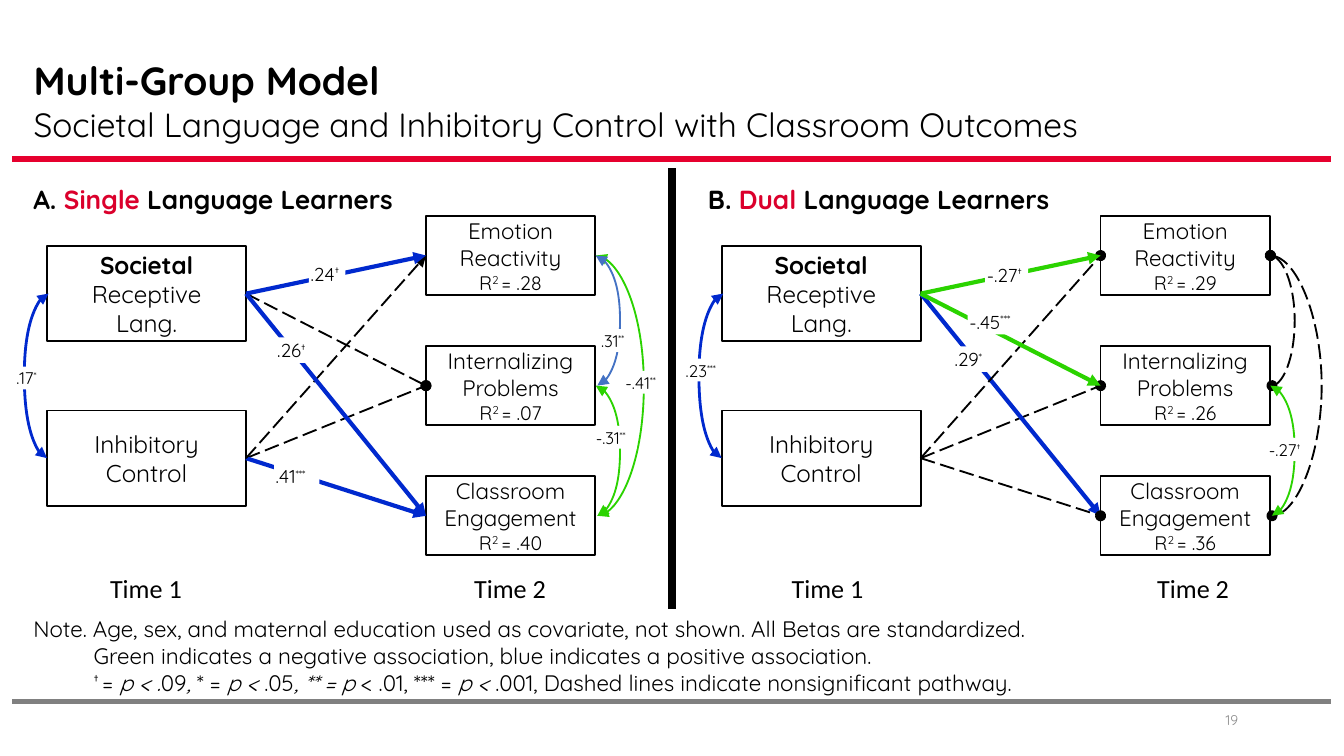
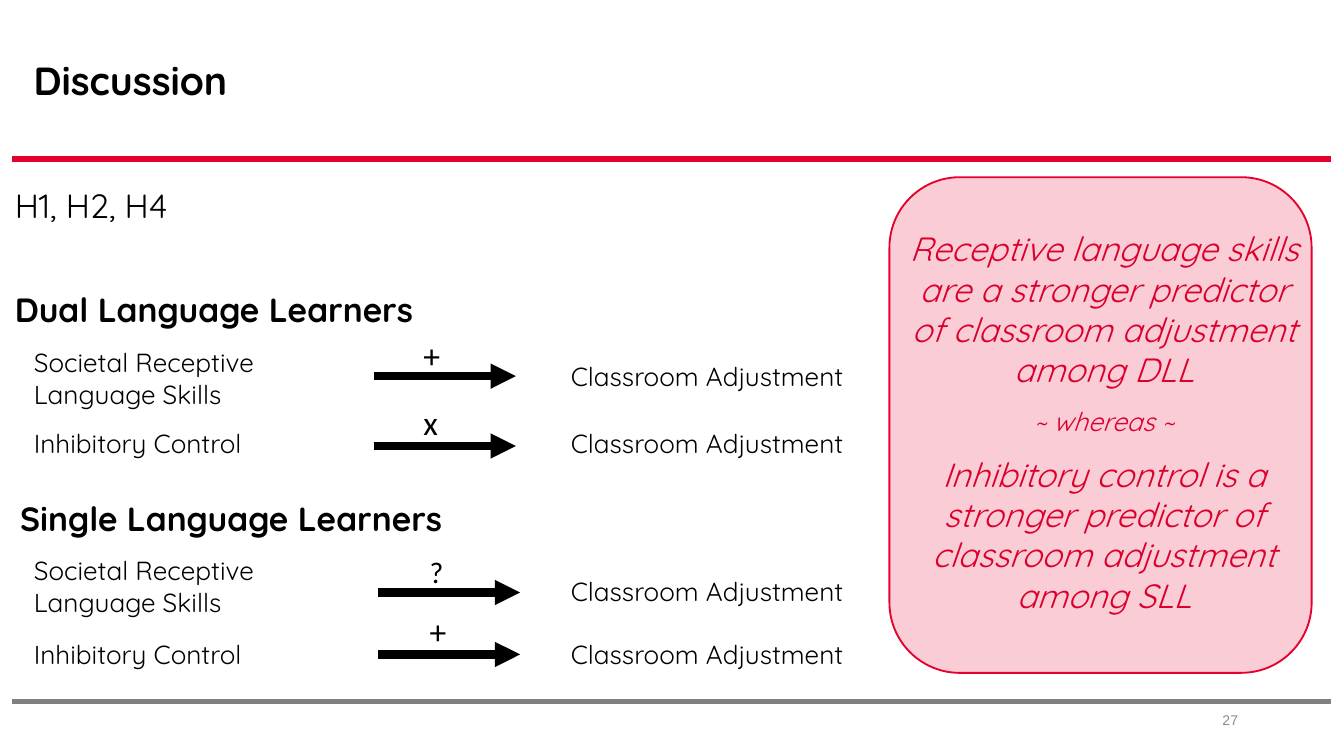
import lxml.etree
import pptx
import pptx.util
from pptx.dml.color import RGBColor
from pptx.enum.dml import MSO_LINE
from pptx.enum.shapes import MSO_CONNECTOR, MSO_SHAPE
from pptx.enum.text import MSO_ANCHOR, MSO_AUTO_SIZE, PP_ALIGN
from pptx.oxml.ns import qn

Cm, Pt = pptx.util.Cm, pptx.util.Pt


class Theme:
    font, plain_font, number_font = "Quicksand", "Calibri", "Arial"
    black, white, grey, pale = "000000", "FFFFFF", "808080", "8C8C8C"
    red, text_red, card_red = "E6002E", "DB002C", "E6002D"
    blue, green, soft_blue = "0029CE", "2BD300", "4472C4"
    title, subtitle, heading, predictor, outcome = 21, 18, 14, 13, 12
    r_squared, path_label, arc_label, number = 10.5, 10, 9, 7.5


# Content: each run is plain text or (text, format)
BOLD, ITALIC, RAISED = {"bold": True}, {"italic": True}, {"raised": True}

PREDICTORS = [[("Societal", BOLD), " Receptive Lang."], ["Inhibitory Control"]]
OUTCOMES = ["Emotion Reactivity", "Internalizing Problems", "Classroom Engagement"]
NOTE = [
    ["Note. Age, sex, and maternal education used as covariate, not shown. "
     "All Betas are standardized."],
    ["Green indicates a negative association, blue indicates a positive association."],
    [("† ", RAISED), "= ", ("p < .", ITALIC), "09", (", ", ITALIC), "* = ",
     ("p < ", ITALIC), ".05", (", ** = p", ITALIC), " < .01, *** = ",
     ("p <", ITALIC), " .001, Dashed lines indicate nonsignificant pathway."],
]

# paths: predictor, outcome, colour (None = nonsignificant), arrowhead
# arcs: outcome, outcome, colour, bulge; labels: value, mark, left, top, width, size
SINGLE = {
    "letter": "A. ", "group": "Single", "left": 0, "times": (1.83, 8.71),
    "r_squared": (".28", ".07", ".40"),
    "paths": [(1, 1, None, "oval"), (1, 2, Theme.blue, "triangle"),
              (1, 0, None, "triangle"), (0, 1, None, "oval"),
              (0, 0, Theme.blue, "triangle"), (0, 2, Theme.blue, "triangle")],
    "arcs": [(0, 2, Theme.green, 0.91), (0, 1, Theme.soft_blue, 0.46),
             (1, 2, Theme.green, 0.46)],
    "labels": [("-.41", "**", 11.79, 7.01, 0.81, Theme.arc_label),
               (".31", "**", 11.33, 6.22, 0.71, Theme.arc_label),
               (".17", "*", 0.28, 6.93, 0.61, Theme.arc_label),
               (".41", "***", 5.18, 8.76, 0.86, Theme.path_label),
               ("-.31", "**", 11.23, 8.05, 0.81, Theme.arc_label),
               (".24", "†", 5.84, 4.93, 0.69, Theme.path_label),
               (".26", "†", 5.21, 6.38, 0.69, Theme.path_label)],
}
DUAL = {
    "letter": "B. ", "group": "Dual", "left": 12.75, "times": (1.96, 8.87),
    "r_squared": (".29", ".26", ".36"),
    "paths": [(1, 1, None, "oval"), (0, 2, Theme.blue, "triangle"),
              (1, 2, None, "oval"), (1, 0, None, "oval"),
              (0, 0, Theme.green, "triangle"), (0, 1, Theme.green, "triangle")],
    "arcs": [(0, 2, None, 0.97), (0, 1, None, 0.46), (1, 2, Theme.green, 0.46)],
    "labels": [("-.27", "†", 5.87, 4.95, 0.81, Theme.path_label),
               ("-.27", "†", 11.2, 8.28, 0.74, Theme.arc_label),
               (".23", "***", 0.18, 6.78, 0.79, Theme.arc_label),
               ("-.45", "***", 5.54, 5.84, 0.99, Theme.path_label),
               (".29", "*", 5.26, 6.55, 0.66, Theme.path_label)],
}

SKILLS = [["Societal Receptive"], ["Language Skills"]]
CONTROL = [["Inhibitory Control"]]
EFFECT = "Classroom Adjustment"
# rows: cause, its middle, sign, its top, its size, arrow height, effect middle
FINDINGS = [
    {"heading": "Dual Language Learners", "left": 0.03, "middle": 5.84,
     "arrow_left": 7.06, "sign_left": 7.75,
     "rows": [(SKILLS, 7.15, "+", 6.2, 18, 7.11, 7.11),
              (CONTROL, 8.38, "x", 7.47, 18, 8.43, 8.38)]},
    {"heading": "Single Language Learners", "left": 0.13, "middle": 9.8,
     "arrow_left": 7.14, "sign_left": 7.87,
     "rows": [(SKILLS, 11.08, "?", 10.34, 16, 11.2, 11.18),
              (CONTROL, 12.36, "+", 11.43, 18, 12.37, 12.36)]},
]
CONCLUSION = [
    ["Receptive language skills are a stronger predictor of classroom "
     "adjustment among DLL"],
    [("~ whereas ~", {"size": 14})],
    ["Inhibitory control is a stronger predictor of classroom adjustment among SLL"],
]


# Text helpers
def colour(code):
    return RGBColor.from_string(code)


def write(frame, lines, align=PP_ALIGN.LEFT, before=0, indents=(), **base):
    """Fill a frame; before is the gap above every paragraph but the first."""
    frame.word_wrap = True
    for number, runs in enumerate(lines):
        para = frame.add_paragraph() if number else frame.paragraphs[0]
        para.alignment = align
        para.space_before = Pt(before if number else 0)
        if number < len(indents) and indents[number]:
            para._p.get_or_add_pPr().set("marL", str(Cm(indents[number])))
        for run in runs:
            words, extra = (run, {}) if isinstance(run, str) else run
            look = {"name": Theme.font, "color": Theme.black, "bold": False,
                    **base, **extra}
            span = para.add_run()
            span.text = words
            span.font.color.rgb = colour(look.pop("color"))
            if look.pop("raised", False):
                span._r.get_or_add_rPr().set("baseline", "30000")
            look["size"] = Pt(look["size"])
            for name, value in look.items():
                setattr(span.font, name, value)


def add_text(page, left, top, width, height, lines,
             anchor=MSO_ANCHOR.TOP, wrap=True, **formats):
    box = page.shapes.add_textbox(Cm(left), Cm(top), Cm(width), Cm(height))
    box.text_frame.vertical_anchor = anchor
    write(box.text_frame, lines, **formats)
    box.text_frame.word_wrap = wrap
    return box


def add_centred_text(page, left, middle, width, height, lines, **formats):
    return add_text(page, left, middle - height / 2, width, height, lines,
                    anchor=MSO_ANCHOR.MIDDLE, **formats)


# Shape helpers
def add_box(page, left, top, width, height, fill, line=None, kind=MSO_SHAPE.RECTANGLE):
    box = page.shapes.add_shape(kind, Cm(left), Cm(top), Cm(width), Cm(height))
    box.shadow.inherit = False
    box.fill.solid()
    box.fill.fore_color.rgb = colour(fill)
    if line:
        box.line.color.rgb = colour(line)
        box.line.width = Pt(1)
    else:
        box.line.fill.background()
    return box


def add_line(page, start, end, code, weight, head=None, tail=None,
             dashed=False, kind=MSO_CONNECTOR.STRAIGHT):
    line = page.shapes.add_connector(kind, *[Cm(value) for value in start + end])
    line.line.color.rgb = colour(code)
    line.line.width = Pt(weight)
    if dashed:
        line.line.dash_style = MSO_LINE.LONG_DASH
    properties = line._element.spPr
    outline = properties.find(qn("a:ln"))
    for tag, mark in (("a:headEnd", head), ("a:tailEnd", tail)):
        if mark:
            lxml.etree.SubElement(outline, qn(tag), type=mark)
    lxml.etree.SubElement(properties, qn("a:effectLst"))
    return line


def add_arc(page, x, top, bottom, bulge, code, weight, mark, dashed=False):
    """Curve between two heights; a negative bulge bends to the left."""
    run = 0.03
    end = x + run if bulge > 0 else x - run
    arc = add_line(page, (x, top), (end, bottom), code, weight, mark, mark,
                   dashed, MSO_CONNECTOR.CURVE)
    guides = arc._element.spPr.find(qn("a:prstGeom")).get_or_add_avLst()
    lxml.etree.SubElement(guides, qn("a:gd"), name="adj1",
                          fmla=f"val {round(abs(bulge) / run * 100000)}")


# Shared frame: title, two rules, page number
def add_page(deck, title, number, subtitle=None, number_font=Theme.font):
    page = deck.slides.add_slide(deck.slide_layouts[5])
    holder = page.shapes.title
    place = {"left": 0.38, "top": 0.94, "width": 22.15,
             "height": 2.69 if subtitle else 1.93}
    for name, value in place.items():
        setattr(holder, name, Cm(value))
    holder.text_frame.auto_size = MSO_AUTO_SIZE.NONE
    holder.text_frame.vertical_anchor = MSO_ANCHOR.TOP
    lines = [[(title, BOLD)]]
    if subtitle:
        lines.append([(subtitle, {"size": Theme.subtitle})])
    write(holder.text_frame, lines, size=Theme.title)
    for y, code in ((3, Theme.red), (13.26, Theme.grey)):
        add_line(page, (0.23, y), (25.15, y), code, 3)
    add_text(page, 17.93, 13.23, 5.72, 0.76, [[number]], anchor=MSO_ANCHOR.MIDDLE,
             align=PP_ALIGN.RIGHT, size=Theme.number, color=Theme.pale, name=number_font)
    return page


# One path diagram
def add_panel(page, panel):
    left = panel["left"]
    add_text(page, left + 0.38, 3.35, 10.29, 0.86,
             [[panel["letter"], (panel["group"], {"color": Theme.text_red}),
               " Language Learners"]], size=Theme.heading, bold=True)

    predictors, outcomes = [], []
    for row, runs in enumerate(PREDICTORS):
        box = add_box(page, left + 0.89, 4.65 + row * 3.11, 3.76, 1.8,
                      Theme.white, Theme.black)
        write(box.text_frame, [runs], PP_ALIGN.CENTER, size=Theme.predictor)
        predictors.append(box)
    for row, (name, share) in enumerate(zip(OUTCOMES, panel["r_squared"])):
        box = add_box(page, left + 8.05, 4.08 + row * 2.46, 3.2, 1.5,
                      Theme.white, Theme.black)
        small = {"size": Theme.r_squared}
        write(box.text_frame,
              [[name], [("R", small), ("2 ", {**small, **RAISED}), (f"= {share}", small)]],
              PP_ALIGN.CENTER, size=Theme.outcome)
        outcomes.append(box)

    for source, target, code, mark in panel["paths"]:
        line = add_line(page, (0, 0), (1, 1), code or Theme.black,
                        2.25 if code else 1, tail=mark, dashed=not code)
        line.begin_connect(predictors[source], 3)
        line.end_connect(outcomes[target], 1)

    def middle(box):
        return (box.top + box.height / 2) / Cm(1)

    for upper, lower, code, bulge in panel["arcs"]:
        add_arc(page, left + 11.26, middle(outcomes[upper]), middle(outcomes[lower]),
                bulge, code or Theme.black, 1, "triangle" if code else "oval", not code)
    add_arc(page, left + 0.92, *map(middle, predictors), -0.46, Theme.blue, 1.5, "triangle")

    for value, mark, x, y, width, size in panel["labels"]:
        label = add_box(page, left + x, y, width, 0.048 * size, Theme.white)
        frame = label.text_frame
        for side in ("left", "top", "right", "bottom"):
            setattr(frame, f"margin_{side}", Cm(0.03))
        frame.vertical_anchor = MSO_ANCHOR.TOP
        write(frame, [[value, (mark, RAISED)]], size=size)
        frame.word_wrap = False
    for number, x in enumerate(panel["times"], 1):
        add_text(page, left + x, 10.7, 1.88, 0.86, [[f"Time {number}"]], wrap=False,
                 size=Theme.heading, name=Theme.plain_font)


def build_model(deck):
    page = add_page(deck, "Multi-Group Model", "19",
                    "Societal Language and Inhibitory Control with Classroom Outcomes")
    for panel in (DUAL, SINGLE):
        add_panel(page, panel)
    add_line(page, (12.7, 3.18), (12.7, 11.51), Theme.black, 4.5)
    add_text(page, 0.38, 11.51, 24.16, 1.8, NOTE, indents=(0, 1.14, 1.14),
             size=Theme.outcome)


def build_discussion(deck):
    page = add_page(deck, "Discussion", "27", number_font=Theme.number_font)
    add_centred_text(page, 0.03, 3.87, 12, 1.05, [["H1, H2, H4"]], size=Theme.subtitle)
    for group in FINDINGS:
        add_centred_text(page, group["left"], group["middle"], 12, 1.05,
                         [[group["heading"]]], size=Theme.subtitle, bold=True)
        start = group["arrow_left"]
        for cause, cause_y, sign, sign_top, size, arrow_y, effect_y in group["rows"]:
            add_centred_text(page, 0.39, cause_y, 5.21, 0.25 + 0.6 * len(cause), cause,
                             size=Theme.heading)
            add_text(page, group["sign_left"], sign_top, 0.84, 1.02, [[sign]],
                     wrap=False, size=size, name=Theme.plain_font)
            add_line(page, (start, arrow_y), (start + 2.69, arrow_y), Theme.black, 4.5,
                     tail="triangle")
            add_centred_text(page, 10.54, effect_y, 6, 0.87, [[EFFECT]],
                             size=Theme.heading)

    # Conclusion card
    card = add_box(page, 16.81, 3.35, 7.98, 9.37, Theme.card_red, Theme.card_red,
                   MSO_SHAPE.ROUNDED_RECTANGLE)
    tint = card._element.spPr.find(qn("a:solidFill"))[0]
    lxml.etree.SubElement(tint, qn("a:alpha"), val="20000")
    add_text(page, 16.81, 4.19, 7.98, 7.87, CONCLUSION, align=PP_ALIGN.CENTER,
             before=8.75, indents=(0.13, 0.13, 0.13), size=Theme.subtitle,
             color=Theme.text_red, italic=True)


def main():
    deck = pptx.Presentation()
    deck.slide_width, deck.slide_height = Cm(25.4), Cm(14.29)
    build_model(deck)
    build_discussion(deck)
    deck.save("out.pptx")


if __name__ == "__main__":
    main()
